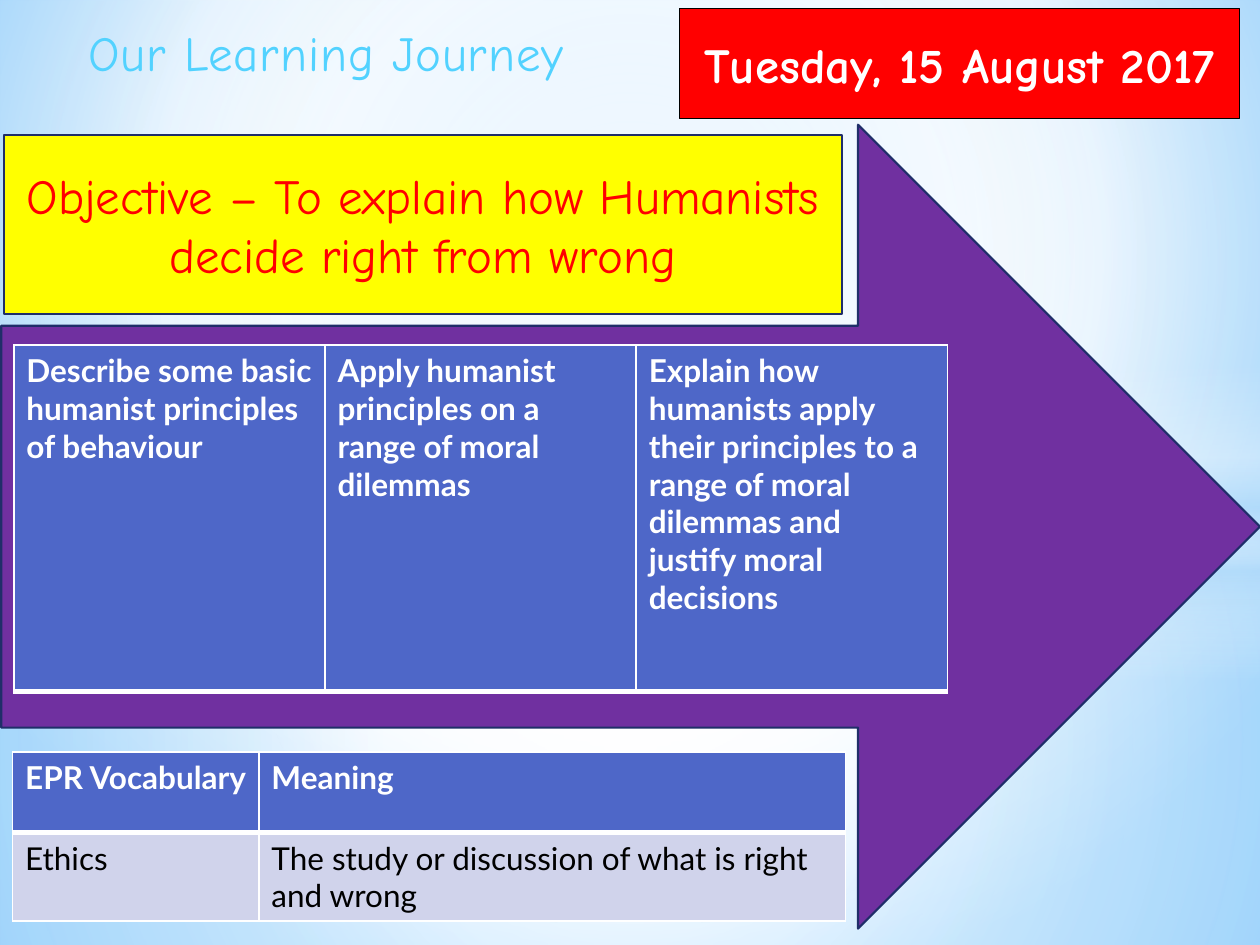
"""Build the lesson slide: learning journey, objective, arrow and two tables."""
import pptx
import pptx.util
import pptx.dml.color
import pptx.enum.shapes
import pptx.enum.text
import pptx.oxml
import pptx.oxml.ns
from dataclasses import dataclass


@dataclass(frozen=True)
class Theme:
    hand: str = "Comic Neue"
    sans: str = "Lato"
    big: int = 28
    small: int = 18
    white: str = "FFFFFF"
    black: str = "000000"
    red: str = "FF0000"
    yellow: str = "FFFF00"
    purple: str = "7030A0"
    navy: str = "1F2E69"
    blue: str = "4E67C8"
    pale: str = "D0D3EB"
    sky: str = "B4DCFA"


T = Theme()
KIND = pptx.enum.shapes.MSO_SHAPE
ALIGN = pptx.enum.text.PP_ALIGN
WIDE, HIGH = 10, 7.5
MID = (50, 50, 50, 50)

BACK = [(0, "9ED5FF", 100), (60, T.white, 100), (100, "5BB9FF", 100)]
INK = [(25, "52D2FF", 100), (100, "20A0CE", 100)]

GLOWS = [
    (KIND.RECTANGLE, (0, 56.4, 100, 43.6), MID,
     [(0, T.white, 91), (37, T.white, 76), (100, T.sky, 79)]),
    (KIND.RECTANGLE, (0, 0, 100, 56.4), MID,
     [(0, T.white, 89), (48, T.white, 62), (100, T.sky, 79)]),
    (KIND.RECTANGLE, (0, 38.67, 100, 33.33), None,
     [(0, T.white, 0), (29, T.white, 30), (45, T.sky, 40),
      (55, T.white, 26), (65, T.sky, 60), (100, T.white, 0)]),
    (KIND.OVAL, (0, 23.33, 100, 74.4), MID,
     [(0, T.white, 100), (54, T.white, 0)]),
]

BLOCKS = [
    (KIND.RECTANGLE, (53.9, 0.93, 44.5, 11.6), T.red, T.black, 0.75,
     "Tuesday, 15 August 2017", T.white, True),
    (KIND.RECTANGLE, (0.3, 14.27, 66.5, 18.93), T.yellow, T.navy, 1.25,
     "Objective – To explain how Humanists decide right from wrong", T.red, False),
    (KIND.RIGHT_ARROW, (0.1, 13.2, 99.9, 85.07), T.purple, T.navy, 1.25,
     "", T.white, False),
]

TITLE = ("Our Learning Journey", (0.1, 1.73, 51.6, 7.6))

TABLES = [
    ((1.1, 36.53), (24.7, 24.7, 24.7), 36.67, [
        ("Describe some basic humanist principles of behaviour",
         "Apply humanist principles on a range of moral dilemmas",
         "Explain how humanists apply their principles to a range of moral "
         "dilemmas and justify moral decisions")]),
    ((1, 79.6), (19.55, 46.55), 8.53, [
        ("EPR Vocabulary", "Meaning"),
        ("Ethics", "The study or discussion of what is right and wrong")]),
]


def across(share):
    return pptx.util.Inches(WIDE * share / 100)


def down(share):
    return pptx.util.Inches(HIGH * share / 100)


def place(box):
    left, top, width, height = box
    return across(left), down(top), across(width), down(height)


def tint(code):
    return pptx.dml.color.RGBColor.from_string(code)


def node(text):
    space = pptx.oxml.ns.nsdecls("a")
    return pptx.oxml.parse_xml(text.replace(">", f" {space}>", 1))


def blend(fill, owner, stops, focus=None):
    fill.solid()
    marks = "".join(
        f'<a:gs pos="{at * 1000}"><a:srgbClr val="{code}">'
        f'<a:alpha val="{alpha * 1000}"/></a:srgbClr></a:gs>'
        for at, code, alpha in stops)
    way = '<a:lin ang="5400000" scaled="0"/>'
    if focus:
        sides = " ".join(f'{s}="{v * 1000}"' for s, v in zip("ltrb", focus))
        way = f'<a:path path="circle"><a:fillToRect {sides}/></a:path>'
    old = next(owner.iter(pptx.oxml.ns.qn("a:solidFill")))
    old.getparent().replace(
        old, node(f'<a:gradFill rotWithShape="1"><a:gsLst>{marks}</a:gsLst>{way}</a:gradFill>'))


def style(para, face, size, code=None, bold=False):
    para.font.name = face
    para.font.size = pptx.util.Pt(size)
    para.font.bold = bold
    if code:
        para.font.color.rgb = tint(code)


def add_glow(slide, kind, box, focus, stops):
    shape = slide.shapes.add_shape(kind, *place(box))
    shape.shadow.inherit = False
    blend(shape.fill, shape.element, stops, focus)
    shape.line.fill.background()


def add_block(slide, kind, box, fill, edge, weight, text, code, bold):
    shape = slide.shapes.add_shape(kind, *place(box))
    shape.shadow.inherit = False
    shape.fill.solid()
    shape.fill.fore_color.rgb = tint(fill)
    shape.line.color.rgb = tint(edge)
    shape.line.width = pptx.util.Pt(weight)
    if text:
        shape.text_frame.text = text
        para = shape.text_frame.paragraphs[0]
        para.alignment = ALIGN.CENTER
        style(para, T.hand, T.big, code, bold)


def add_title(slide, text, box):
    frame = slide.shapes.add_textbox(*place(box)).text_frame
    frame.word_wrap = True
    frame.auto_size = pptx.enum.text.MSO_AUTO_SIZE.SHAPE_TO_FIT_TEXT
    para = frame.paragraphs[0]
    para.alignment = ALIGN.CENTER
    style(para, T.hand, T.big)
    run = para.add_run()
    run.text = text
    props = run.font
    blend(props.fill, para._p, INK)
    run._r.get_or_add_rPr().set("spc", "50")


def edge_cell(cell, top, base):
    props = cell._tc.get_or_add_tcPr()
    for spot, (side, weight) in enumerate(zip("LRTB", (1, 1, top, base))):
        props.insert(spot, node(
            f'<a:ln{side} w="{weight * 12700}"><a:solidFill>'
            f'<a:srgbClr val="{T.white}"/></a:solidFill></a:ln{side}>'))


def add_grid(slide, spot, cols, height, rows):
    box = (*spot, sum(cols), height * len(rows))
    table = slide.shapes.add_table(len(rows), len(cols), *place(box)).table
    for col, width in zip(table.columns, cols):
        col.width = across(width)
    for r, texts in enumerate(rows):
        head = r == 0
        table.rows[r].height = down(height)
        for c, text in enumerate(texts):
            cell = table.cell(r, c)
            cell.text = text
            cell.fill.solid()
            cell.fill.fore_color.rgb = tint(T.blue if head else T.pale)
            style(cell.text_frame.paragraphs[0], T.sans, T.small,
                  T.white if head else T.black, head)
            edge_cell(cell, 1 if head else 3, 3 if head else 1)


def main():
    deck = pptx.Presentation()
    deck.slide_width, deck.slide_height = across(100), down(100)
    slide = deck.slides.add_slide(deck.slide_layouts[6])
    blend(slide.background.fill, slide.element, BACK, (20, 10, 20, 60))
    for glow in GLOWS:
        add_glow(slide, *glow)
    for block in BLOCKS:
        add_block(slide, *block)
    add_title(slide, *TITLE)
    for grid in TABLES:
        add_grid(slide, *grid)
    deck.save("out.pptx")


if __name__ == "__main__":
    main()
